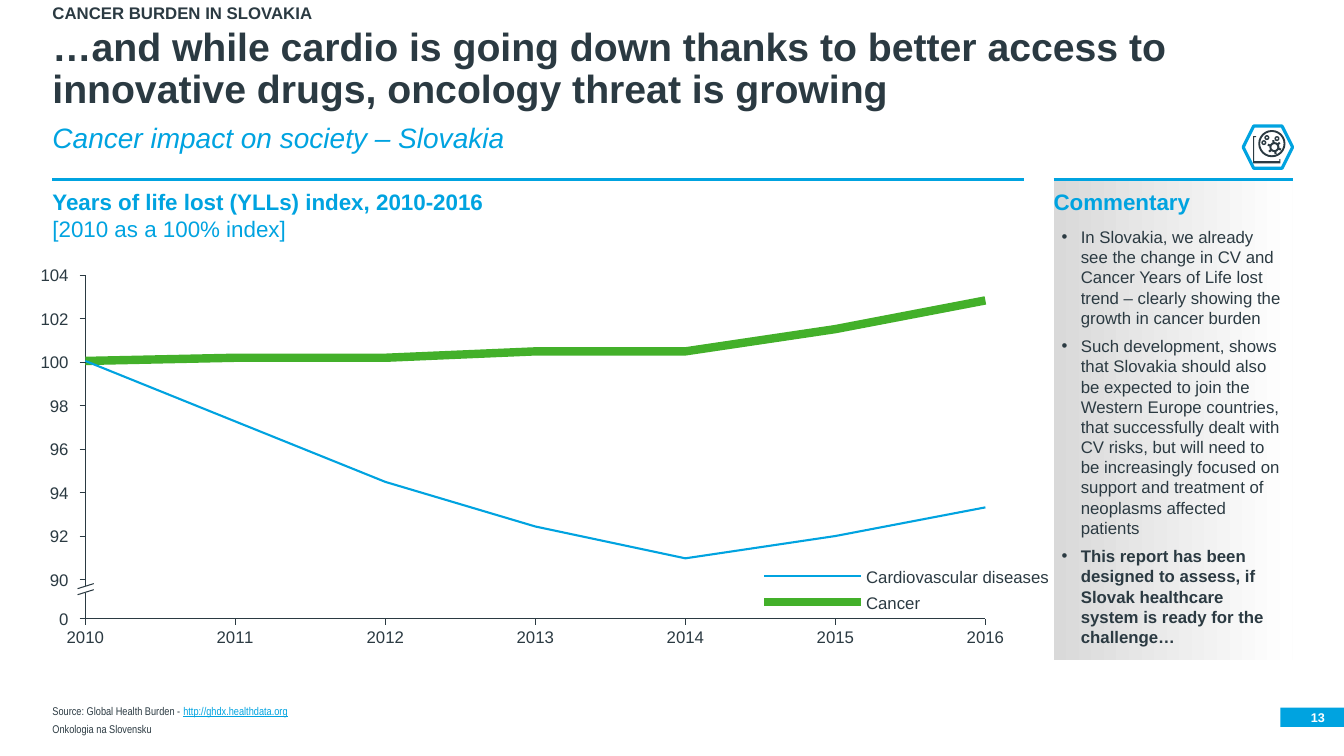
"""Build the slide on years of life lost to heart disease and cancer in Slovakia."""
import math

import lxml.etree
import pptx
import pptx.chart.data
import pptx.dml.color
import pptx.enum.chart
import pptx.enum.shapes
import pptx.enum.text
import pptx.oxml
import pptx.oxml.ns
import pptx.util

Inches, Pt = pptx.util.Inches, pptx.util.Pt
qn = pptx.oxml.ns.qn
Kind = pptx.enum.shapes.MSO_SHAPE
Anchor = pptx.enum.text.MSO_ANCHOR
Align = pptx.enum.text.PP_ALIGN
Chart = pptx.enum.chart
INK, BLUE, GREEN, WHITE = "2B3A42", "00A3E0", "43B02A", "FFFFFF"


def tint(code):
    return pptx.dml.color.RGBColor.from_string(code)


def put(box, at, paras, size=12, face="Arial", inset=(0, 0, 0, 0), anchor=Anchor.TOP,
        align=Align.LEFT, wrap=True, lead=1.0, after=0, bullet=False):
    box.left, box.top, box.width, box.height = [Inches(v) for v in at]
    frame = box.text_frame
    frame.word_wrap, frame.vertical_anchor = wrap, anchor
    frame.auto_size = pptx.enum.text.MSO_AUTO_SIZE.NONE
    (frame.margin_left, frame.margin_top,
     frame.margin_right, frame.margin_bottom) = [Inches(v) for v in inset]
    for i, runs in enumerate(paras):
        para = frame.add_paragraph() if i else frame.paragraphs[0]
        props = para._p.get_or_add_pPr()
        indent = Inches(0.19) if bullet else 0
        props.set("marL", str(indent))
        props.set("indent", str(-indent))
        if bullet:
            lxml.etree.SubElement(props, qn("a:buFont")).set("typeface", "Arial")
            lxml.etree.SubElement(props, qn("a:buChar")).set("char", "•")
        else:
            lxml.etree.SubElement(props, qn("a:buNone"))
        para.alignment, para.line_spacing = align, lead
        para.space_before, para.space_after = Pt(0), Pt(after)
        for text, style, color in runs:
            if text == "\n":
                para.add_line_break()
                continue
            run = para.add_run()
            run.text = text
            font = run.font
            font.name, font.size, font.color.rgb = face, Pt(size), tint(color)
            font.bold, font.italic, font.underline = "b" in style, "i" in style, "u" in style


deck = pptx.Presentation()
deck.slide_width, deck.slide_height = Inches(13.33), Inches(7.5)
slide = deck.slides.add_slide(deck.slide_layouts.get_by_name("Comparison"))
shapes = slide.shapes
title, head, notes, sub, source = slide.placeholders

put(head, (0.52, 0.05, 12.3, 0.18), [[("CANCER BURDEN IN SLOVAKIA", "b", INK)]], lead=0.9)
put(title, (0.52, 0.26, 12.3, 0.85),
    [[("…and while cardio is going down thanks to better access to innovative drugs, "
       "oncology threat is growing", "b", INK)]], size=28, anchor=Anchor.BOTTOM, lead=0.9)
put(sub, (0.52, 1.23, 12.3, 0.3), [[("Cancer impact on society – Slovakia", "i", BLUE)]],
    size=20, lead=0.9)
put(source, (0.52, 7, 9.87, 0.12),
    [[("Source: Global Health Burden - ", "", INK), ("http://ghdx.healthdata.org", "u", BLUE)]],
    size=8, face="Arial Narrow", anchor=Anchor.BOTTOM, lead=0.9)

# 
panel = shapes.add_shape(Kind.RECTANGLE, Inches(10.45), Inches(1.78), Inches(2.37), Inches(4.77))
panel.shadow.inherit = False
panel.line.fill.background()
panel.fill.gradient()
panel.fill.gradient_angle = 0
for stop, code, place in zip(panel.fill.gradient_stops, ("D9D9D9", WHITE), (0, 1)):
    stop.color.rgb, stop.position = tint(code), place

shapes.element.append(notes.element)
put(notes, (10.45, 2.17, 2.37, 4.38), [
    [("In Slovakia, we already see the change in CV and Cancer Years of Life lost trend – "
      "clearly showing the growth in cancer burden", "", INK)],
    [("Such development, shows that Slovakia should also be expected to join the Western Europe "
      "countries, that successfully dealt with CV risks, but will need to be increasingly focused "
      "on support and treatment of neoplasms affected patients", "", INK)],
    [("This report has been designed to assess, if Slovak healthcare system is ready for the "
      "challenge…", "b", INK)],
], inset=(0.08,) * 4, after=6, bullet=True)

data = pptx.chart.data.XyChartData()
trends = [("Cardiovascular diseases", BLUE, 1.5, (81, 62, 43, 29, 19, 26, 35)),
          ("Cancer", GREEN, 6, (81, 82, 82, 84, 84, 91, 100))]
for name, code, weight, values in trends:
    series = data.add_series(name)
    for year, value in enumerate(values, 2010):
        series.add_data_point(year, value)
chart = shapes.add_chart(Chart.XL_CHART_TYPE.XY_SCATTER_LINES_NO_MARKERS, Inches(0.5),
                         Inches(2.64), Inches(9.62), Inches(3.86), data).chart
chart.has_legend = chart.has_title = False
chart.font.name, chart.font.size, chart.font.color.rgb = "Arial", Pt(12), tint(INK)
for series, (name, code, weight, values) in zip(chart.plots[0].series, trends):
    series.smooth = False
    series.marker.style = Chart.XL_MARKER_STYLE.NONE
    series.format.line.color.rgb, series.format.line.width = tint(code), Pt(weight)
years, index = chart.category_axis, chart.value_axis
for axis, low, high, step in ((years, 2010, 2016, 1), (index, 0, 108, 14)):
    axis.minimum_scale, axis.maximum_scale, axis.major_unit = low, high, step
    axis.has_major_gridlines = False
    axis.minor_tick_mark = axis.major_tick_mark = Chart.XL_TICK_MARK.NONE
    axis.format.line.color.rgb, axis.format.line.width = tint(INK), Pt(0.75)
years.major_tick_mark = Chart.XL_TICK_MARK.OUTSIDE
years.tick_labels.number_format, years.tick_labels.number_format_is_linked = "0", False
index.tick_label_position = Chart.XL_TICK_LABEL_POSITION.NONE
area = chart._chartSpace.find(".//" + qn("c:plotArea"))
for old in area.findall(qn("c:layout")):
    area.remove(old)
layout = lxml.etree.Element(qn("c:layout"))
manual = lxml.etree.SubElement(layout, qn("c:manualLayout"))
for tag, value in (("layoutTarget", "inner"), ("xMode", "edge"), ("yMode", "edge"),
                   ("x", "0.036"), ("y", "0.023"), ("w", "0.928"), ("h", "0.884")):
    lxml.etree.SubElement(manual, qn("c:" + tag)).set("val", value)
area.insert(0, layout)

for points, code in (
        ([(77, 584), (93, 579), (93, 586), (77, 590)], WHITE),
        ([(1269, 160), (1244, 160), (1244, 136), (1246, 136), (1246, 135), (1243, 135),
          (1243, 162), (1270, 162), (1270, 158), (1269, 158)], INK)):
    if code == INK:
        badge = shapes.add_shape(Kind.HEXAGON, Inches(12.33), Inches(1.25),
                                 Inches(0.49), Inches(0.42))
        badge.shadow.inherit = False
        badge.fill.solid()
        badge.fill.fore_color.rgb = tint(WHITE)
        badge.line.color.rgb, badge.line.width = tint(BLUE), Pt(2.25)
    pen = shapes.build_freeform(*points[0], scale=Inches(0.01))
    pen.add_line_segments(points[1:])
    form = pen.convert_to_shape()
    form.shadow.inherit = False
    form.fill.solid()
    form.fill.fore_color.rgb = tint(code)
    form.line.fill.background()

for x, y, size, rim in ((12.48, 1.29, 0.27, 0.07), (12.54, 1.34, 0.05, 0.3),
                        (12.64, 1.35, 0.05, 0.3), (12.51, 1.39, 0.05, 0.3),
                        (12.59, 1.41, 0.1, 0.2)):
    ring = shapes.add_shape(Kind.DONUT, Inches(x), Inches(y), Inches(size), Inches(size))
    ring.adjustments[0] = rim
    ring.shadow.inherit = False
    ring.fill.solid()
    ring.fill.fore_color.rgb = tint(INK)
    ring.line.fill.background()

scale = [(str(104 - 2 * i), 2.73 + 0.4314 * i) for i in range(8)] + [("0", 6.14)]
lines = [(0.79, y, 0.85, y, INK, 0.75) for label, y in scale]
lines += [(0.77, y, 0.93, y - 0.05, INK, 0.75) for y in (5.84, 5.9)]
lines += [(x, 1.78, end, 1.78, BLUE, 2.25) for x, end in ((0.52, 10.16), (10.45, 12.82))]
for turn in range(6):
    angle = math.radians(60 * turn + 20)
    dx, dy = math.cos(angle), math.sin(angle)
    lines.append((12.64 + 0.04 * dx, 1.46 + 0.04 * dy,
                  12.64 + 0.07 * dx, 1.46 + 0.07 * dy, INK, 1.5))
for row, (name, code, weight, values) in enumerate(trends):
    y = 5.71 + 0.26 * row
    lines.append((7.58, y, 8.54, y, code, weight))
    put(shapes.add_textbox(0, 0, 0, 0), (8.59, y - 0.09, (1.81, 0.53)[row], 0.2),
        [[(name, "", INK)]], anchor=Anchor.MIDDLE, wrap=False)
for *ends, code, weight in lines:
    line = shapes.add_connector(pptx.enum.shapes.MSO_CONNECTOR.STRAIGHT,
                                *[Inches(v) for v in ends])
    line.line.color.rgb, line.line.width = tint(code), Pt(weight)
    lxml.etree.SubElement(line.element.spPr, qn("a:effectLst"))
for label, y in scale:
    wide = 0.0925 * len(label)
    put(shapes.add_textbox(0, 0, 0, 0), (0.68 - wide, y - 0.1, wide, 0.2),
        [[(label, "", INK)]], anchor=Anchor.MIDDLE, align=Align.RIGHT, wrap=False)

put(shapes.add_textbox(0, 0, 0, 0), (0.52, 1.79, 9.63, 0.62),
    [[("Years of life lost (YLLs) index, 2010-2016", "b", BLUE), ("\n", "", BLUE),
      ("[2010 as a 100% index]", "", BLUE)]], size=16, inset=(0, 0.08, 0, 0))
put(shapes.add_textbox(0, 0, 0, 0), (10.45, 1.79, 2.37, 0.35),
    [[("Commentary", "b", BLUE)]], size=16, inset=(0, 0.08, 0, 0))
put(shapes.add_textbox(0, 0, 0, 0), (0.52, 7.17, 9.87, 0.13),
    [[("Onkologia na Slovensku", "", INK)]], size=8, face="Arial Narrow", anchor=Anchor.BOTTOM)
tab = shapes.add_shape(Kind.RECTANGLE, 0, 0, 0, 0)
tab.shadow.inherit = False
tab.fill.solid()
tab.fill.fore_color.rgb = tint(BLUE)
tab.line.fill.background()
put(tab, (12.7, 7.02, 0.63, 0.19), [[("13", "b", WHITE)]], size=9, inset=(0, 0, 0.19, 0),
    anchor=Anchor.MIDDLE, align=Align.RIGHT)
deck.save("out.pptx")
